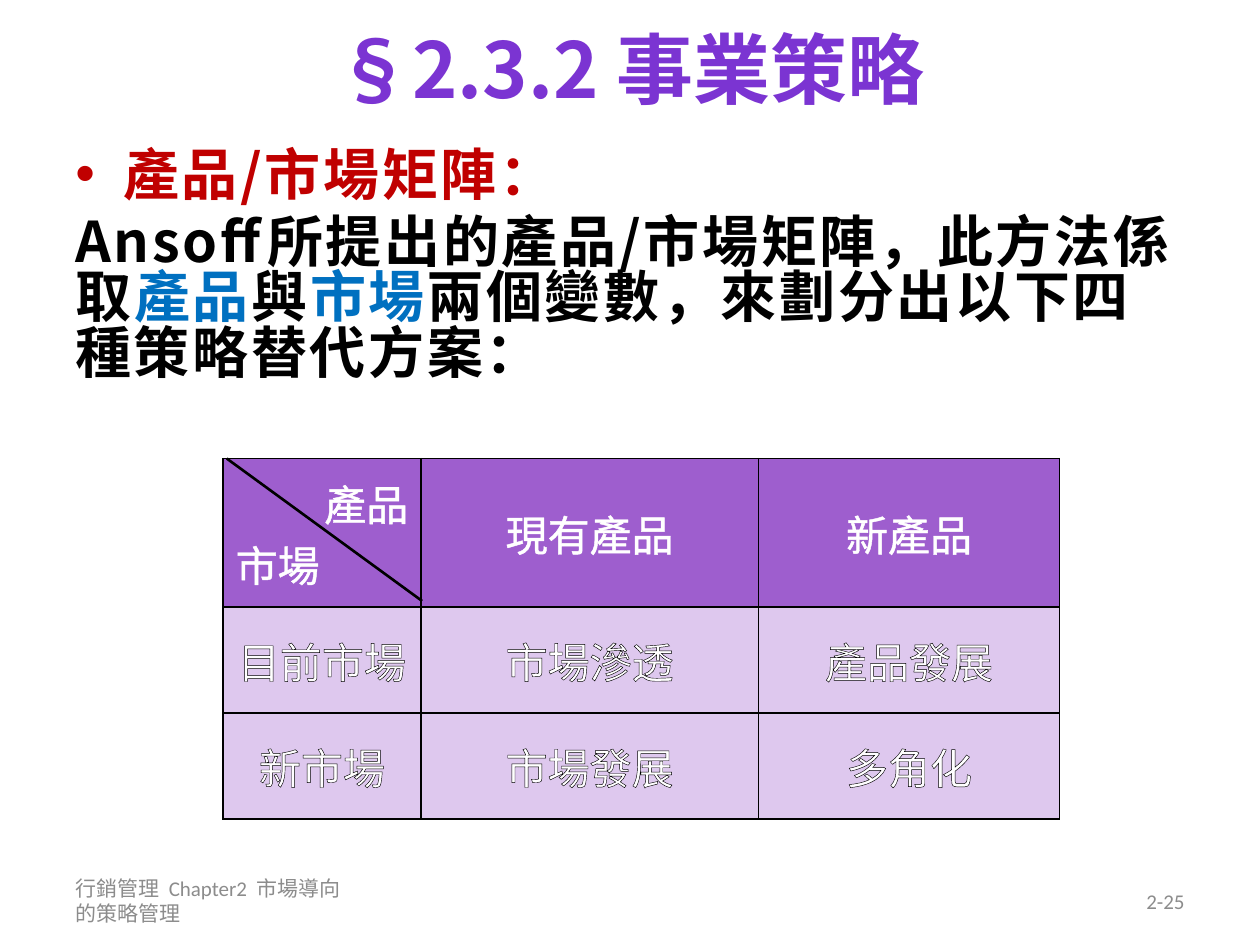
from dataclasses import dataclass

from lxml.etree import SubElement
from pptx import Presentation
from pptx.dml.color import RGBColor
from pptx.enum.shapes import MSO_CONNECTOR
from pptx.enum.text import MSO_ANCHOR, PP_ALIGN
from pptx.oxml import parse_xml
from pptx.oxml.ns import nsdecls, qn
from pptx.util import Inches, Pt

COLORS = {
    "black": "000000", "white": "FFFFFF", "red": "C00000", "blue": "0070C0",
    "gray": "8C8C8C", "header": "9E5ECE", "body": "DEC8EE",
    "violet": "7B34D2", "violet_mid": "7330C4", "violet_dark": "3D1B67",
    "title_edge": "5E457C",
}
CJK = "Noto Sans CJK SC"
WIDTH, HEIGHT = Inches(10), Inches(7.5)


@dataclass(frozen=True)
class Box:
    """Position and size as percentages of the slide."""
    left: float
    top: float
    width: float
    height: float

    def lengths(self) -> tuple:
        return across(self.left), down(self.top), across(self.width), down(self.height)


@dataclass(frozen=True)
class Style:
    size: float
    font: str = CJK
    bold: bool = False
    spacing: float = 0
    outline: str = ""
    outline_width: float = 0


@dataclass(frozen=True)
class Part:
    text: str
    color: str


TITLE = Style(44, bold=True, outline="title_edge", outline_width=0.71)
BODY = Style(32, bold=True, spacing=1.5)
FOOTER = Style(12, font="Calibri")
HEADER_CELL = Style(24, outline="white", outline_width=1.45)
BODY_CELL = Style(24, outline="black", outline_width=1.45)

COLUMN_SHARES = (15.7, 26.8, 23.9)
ROW_SHARES = (15.73, 11.2, 11.2)
TABLE_BOX = Box(17.7, 48.53, sum(COLUMN_SHARES), sum(ROW_SHARES))
MATRIX = (
    ("產品\n市場", "現有產品", "新產品"),
    ("目前市場", "市場滲透", "產品發展"),
    ("新市場", "市場發展", "多角化"),
)


def across(share: float) -> int:
    return int(WIDTH * share / 100)


def down(share: float) -> int:
    return int(HEIGHT * share / 100)


def rgb(name: str) -> RGBColor:
    return RGBColor.from_string(COLORS[name])


def solid_line(tag: str, color: str, width: float):
    return parse_xml(
        f'<a:{tag} {nsdecls("a")} w="{int(Pt(width))}"><a:solidFill>'
        f'<a:srgbClr val="{COLORS[color]}"/></a:solidFill></a:{tag}>')


def format_run(run, style: Style, color: str) -> None:
    run.font.size = Pt(style.size)
    run.font.bold = style.bold
    run.font.name = style.font
    run.font.color.rgb = rgb(color)
    properties = run.font._element
    SubElement(properties, qn("a:ea")).set("typeface", CJK)
    if style.spacing:
        properties.set("spc", str(int(style.spacing * 100)))
    if style.outline:
        properties.insert(0, solid_line("ln", style.outline, style.outline_width))


def fill_paragraph(paragraph, parts: list[Part], style: Style, alignment=PP_ALIGN.LEFT) -> None:
    paragraph.alignment = alignment
    for part in parts:
        run = paragraph.add_run()
        run.text = part.text
        format_run(run, style, part.color)


def add_text_frame(slide, box: Box, anchor=MSO_ANCHOR.MIDDLE):
    text_frame = slide.shapes.add_textbox(*box.lengths()).text_frame
    text_frame.word_wrap = True
    text_frame.vertical_anchor = anchor
    return text_frame


def add_title(slide) -> None:
    paragraph = add_text_frame(slide, Box(5, 0, 90, 14.27)).paragraphs[0]
    fill_paragraph(paragraph, [Part("§2.3.2 事業策略", "violet")], TITLE, PP_ALIGN.CENTER)
    stops = ((0, "violet_dark"), (43, "violet"), (48, "violet_mid"), (100, "violet_dark"))
    stop_xml = "".join(
        f'<a:gs pos="{position * 1000}"><a:srgbClr val="{COLORS[color]}"/></a:gs>'
        for position, color in stops)
    gradient = parse_xml(
        f'<a:gradFill {nsdecls("a")}><a:gsLst>{stop_xml}</a:gsLst>'
        '<a:lin ang="5400000" scaled="0"/></a:gradFill>')
    properties = paragraph.runs[0].font._element
    properties.replace(properties.find(qn("a:solidFill")), gradient)


def add_body(slide) -> None:
    text_frame = add_text_frame(slide, Box(5, 15.33, 90, 32.53), MSO_ANCHOR.TOP)
    heading, description = text_frame.paragraphs[0], text_frame.add_paragraph()
    for paragraph in (heading, description):
        paragraph.line_spacing = 0.83
    description.space_before = Pt(6)
    properties = heading._p.get_or_add_pPr()
    properties.set("marL", str(Inches(0.38)))
    properties.set("indent", str(-Inches(0.38)))
    SubElement(properties, qn("a:buFont")).set("typeface", "Arial")
    SubElement(properties, qn("a:buChar")).set("char", "•")
    fill_paragraph(heading, [Part("產品/市場矩陣：", "red")], BODY)
    fill_paragraph(description, [
        Part("Ansoff所提出的產品/市場矩陣，此方法係取", "black"),
        Part("產品", "blue"),
        Part("與", "black"),
        Part("市場", "blue"),
        Part("兩個變數，來劃分出以下四種策略替代方案：", "black"),
    ], BODY)


def add_footer(slide, text: str, left: float, alignment) -> None:
    text_frame = add_text_frame(slide, Box(left, 92.67, 23.3, 5.33))
    fill_paragraph(text_frame.paragraphs[0], [Part(text, "gray")], FOOTER, alignment)


def format_cell(cell, text: str, is_header: bool) -> None:
    cell.text_frame.text = text
    cell.vertical_anchor = MSO_ANCHOR.MIDDLE
    paragraphs = cell.text_frame.paragraphs
    alignments = (PP_ALIGN.RIGHT, PP_ALIGN.LEFT) if len(paragraphs) > 1 else (PP_ALIGN.CENTER,)
    for paragraph, alignment in zip(paragraphs, alignments):
        paragraph.alignment = alignment
        format_run(paragraph.runs[0], HEADER_CELL if is_header else BODY_CELL, "white")
    properties = cell._tc.get_or_add_tcPr()
    for side in ("lnL", "lnR", "lnT", "lnB"):
        properties.append(solid_line(side, "black", 1))
    cell.fill.solid()
    cell.fill.fore_color.rgb = rgb("header" if is_header else "body")


def add_matrix(slide) -> None:
    table = slide.shapes.add_table(len(MATRIX), len(MATRIX[0]), *TABLE_BOX.lengths()).table
    for column, share in zip(table.columns, COLUMN_SHARES):
        column.width = across(share)
    for row, share in zip(table.rows, ROW_SHARES):
        row.height = down(share)
    for row_index, texts in enumerate(MATRIX):
        for column_index, text in enumerate(texts):
            format_cell(table.cell(row_index, column_index), text, row_index == 0)


def add_diagonal(slide) -> None:
    connector = slide.shapes.add_connector(
        MSO_CONNECTOR.STRAIGHT, across(18), down(48.53), across(33.5), down(63.6))
    connector.line.color.rgb = rgb("black")
    connector.line.width = Pt(1.5)
    SubElement(connector._element.spPr, qn("a:effectLst"))


def main() -> None:
    presentation = Presentation()
    presentation.slide_width, presentation.slide_height = WIDTH, HEIGHT
    slide = presentation.slides.add_slide(presentation.slide_layouts[6])
    add_title(slide)
    add_body(slide)
    add_footer(slide, "行銷管理  Chapter2  市場導向的策略管理", 5, PP_ALIGN.LEFT)
    add_footer(slide, "2-25", 71.7, PP_ALIGN.RIGHT)
    add_matrix(slide)
    add_diagonal(slide)
    presentation.save("out.pptx")


if __name__ == "__main__":
    main()
